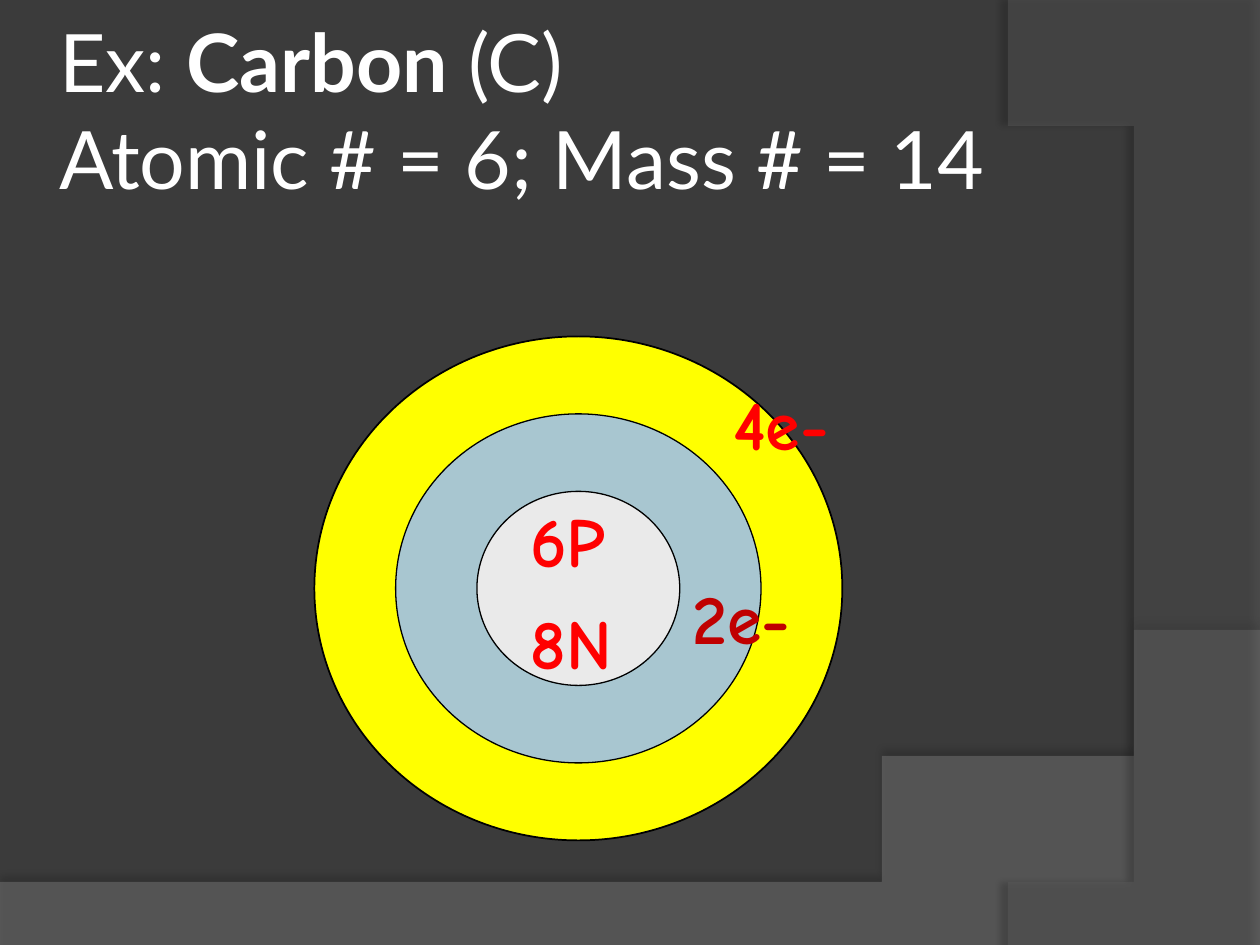
from lxml import etree
from pptx import Presentation
from pptx.dml.color import RGBColor
from pptx.enum.shapes import MSO_SHAPE
from pptx.enum.text import MSO_ANCHOR, MSO_AUTO_SIZE, PP_ALIGN
from pptx.oxml.ns import qn
from pptx.util import Inches, Pt

OVAL = MSO_SHAPE.OVAL
MIDDLE = MSO_ANCHOR.MIDDLE
FIXED = MSO_AUTO_SIZE.NONE
LEFT = PP_ALIGN.LEFT
HUES = {
    "back": "3B3B3B", "wave": "7F7F7F", "arc": "5E5E5E", "black": "000000",
    "white": "FFFFFF", "outer": "FFFF00", "inner": "A8C6D0",
    "core": "EAEAEA", "red": "FF0000", "dark": "C00000",
}
HUES = {name: RGBColor.from_string(hue) for name, hue in HUES.items()}
WIDE, HIGH = 10, 7.5

deck = Presentation()
deck.slide_width, deck.slide_height = Inches(WIDE), Inches(HIGH)
slide = deck.slides.add_slide(deck.slide_layouts[5])
slide.background.fill.solid()
slide.background.fill.fore_color.rgb = HUES["back"]


def curve(a, b, c, d, steps=60):
    """Points along a cubic curve from a to d."""
    spots = []
    for i in range(steps + 1):
        t = i / steps
        u = 1 - t
        spots.append(tuple(u**3 * p + 3 * u * u * t * q + 3 * u * t * t * r + t**3 * s
                           for p, q, r, s in zip(a, b, c, d)))
    return spots


def style(run, font, size, hue, bold):
    run.font.name, run.font.size = font, Pt(size)
    run.font.color.rgb, run.font.bold = HUES[hue], bold


# Backdrop: translucent wave and arc, each with a soft shadow
wave = [(0, 7.51), (WIDE, 7.51)] + curve((WIDE, 5.2), (5.59, 7.29), (3.91, 7.19), (0, 7.05))
arc = [(WIDE, 0.02), (WIDE, HIGH)] + curve((8.21, HIGH), (9.35, 6.19), (10.18, 3), (8, 0))
for spots, hue, alpha, shade, gap, turn in (
    (wave, "wave", 45, 35, 3.5, 270),
    (arc, "arc", 40, 45, 4, 180),
):
    pen = slide.shapes.build_freeform(*spots[0], scale=Inches(1))
    pen.add_line_segments(spots[1:])
    form = pen.convert_to_shape()
    form.line.fill.background()
    form.fill.solid()
    form.fill.fore_color.rgb = HUES[hue]
    props = form.fill._xPr
    tint = props.find(qn("a:solidFill"))[0]
    etree.SubElement(tint, qn("a:alpha"), val=str(alpha * 1000))
    form.shadow.inherit = False
    glow = etree.SubElement(props.find(qn("a:effectLst")), qn("a:outerShdw"),
                            blurRad=str(Pt(4)), dist=str(Pt(gap)),
                            dir=str(turn * 60000), algn="ctr", rotWithShape="0")
    tint = etree.SubElement(glow, qn("a:srgbClr"), val=str(HUES["black"]))
    etree.SubElement(tint, qn("a:alpha"), val=str(shade * 1000))

# Title: the deep bottom inset lifts both lines
title = slide.shapes.title
title.left, title.top = Inches(0.42), Inches(0.5)
title.width, title.height = Inches(9.25), Inches(1.5)
frame = title.text_frame
frame.auto_size, frame.vertical_anchor, frame.word_wrap = FIXED, MIDDLE, True
frame.margin_left = frame.margin_right = frame.margin_top = Inches(0.05)
frame.margin_bottom = Inches(0.82)
frame.text = "Ex: "
head = frame.paragraphs[0]
head.alignment = LEFT
head.add_run().text = "Carbon"
head.add_run().text = " (C)"
head.add_line_break()
head.add_run().text = "Atomic # = 6; Mass # = 14"
for run in head.runs:
    style(run, "Lato", 46, "white", run.text == "Carbon")

# Atom: concentric shells shrinking by an equal step
midx, midy = 4.59, 4.67
for i, (hue, line) in enumerate((("outer", 1), ("inner", 0.75), ("core", 0.75))):
    w, h = 4.19 - 1.29 * i, 4 - 1.23 * i
    ring = slide.shapes.add_shape(OVAL, Inches(midx - w / 2), Inches(midy - h / 2),
                                  Inches(w), Inches(h))
    ring.shadow.inherit = False
    ring.fill.solid()
    ring.fill.fore_color.rgb = HUES[hue]
    ring.line.color.rgb = HUES["black"]
    ring.line.width = Pt(line)

# Particle counts
for text, hue, x, y, w, h in (
    ("2e-", "dark", 5.4, 4.51, 1.61, 0.92),
    ("4e-", "red", 5.72, 2.97, 1.61, 0.92),
    ("6P\n8N", "red", 4.11, 3.9, 1.29, 1.54),
):
    box = slide.shapes.add_textbox(Inches(x), Inches(y), Inches(w), Inches(h))
    box.text_frame.word_wrap = True
    box.text_frame.text = text
    for para in box.text_frame.paragraphs:
        para.space_after = Pt(10)
        style(para.runs[0], "Comic Neue", 40, hue, True)

deck.save("out.pptx")
